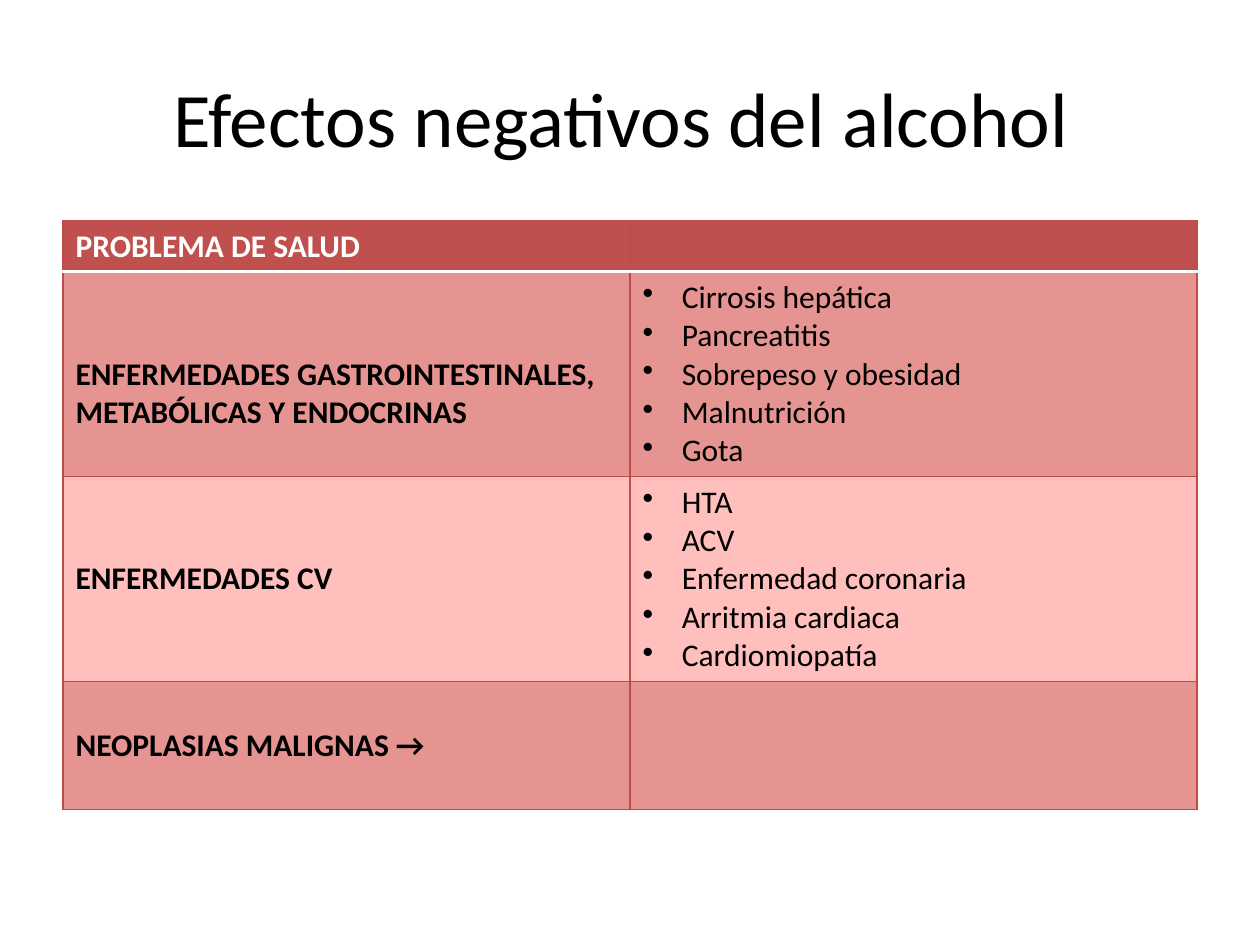
"""Build a slide with a table of the negative effects of alcohol on health."""
import pptx
import pptx.dml.color
import pptx.enum.text
import pptx.oxml
import pptx.oxml.ns
import pptx.util
from pptx.util import Cm

COLORS = {
    "text": "000000",
    "header": "C0504D",
    "header_text": "FFFFFF",
    "dark_band": "E59491",
    "light_band": "FFC0BD",
    "border": "BF4C48",
}
FONT = "Calibri"
LINE_HEIGHT = Cm(0.77)
ROWS = [
    (1.03, "header", "PROBLEMA DE SALUD", []),
    (4.13, "dark_band", "ENFERMEDADES GASTROINTESTINALES, METABÓLICAS Y ENDOCRINAS",
     ["Cirrosis hepática", "Pancreatitis", "Sobrepeso y obesidad", "Malnutrición", "Gota"]),
    (4.13, "light_band", "ENFERMEDADES CV",
     ["HTA", "ACV", "Enfermedad coronaria", "Arritmia cardiaca", "Cardiomiopatía"]),
    (2.58, "dark_band", "NEOPLASIAS MALIGNAS →", []),
]


def format_paragraph(paragraph, size, color, bold=False):
    paragraph.font.name = FONT
    paragraph.font.size = pptx.util.Pt(size)
    paragraph.font.bold = bold
    paragraph.font.color.rgb = pptx.dml.color.RGBColor.from_string(COLORS[color])


def set_border(cell, position, side, color, width):
    line = pptx.oxml.parse_xml(
        f'<a:{side} {pptx.oxml.ns.nsdecls("a")} w="{pptx.util.Pt(width)}">'
        f'<a:solidFill><a:srgbClr val="{COLORS[color]}"/></a:solidFill></a:{side}>')
    cell._tc.get_or_add_tcPr().insert(position, line)


presentation = pptx.Presentation()
presentation.slide_width, presentation.slide_height = Cm(25.4), Cm(19.05)
slide = presentation.slides.add_slide(presentation.slide_layouts[5])

title = slide.shapes.title
title.left, title.top, title.width, title.height = Cm(1.27), Cm(0.76), Cm(22.86), Cm(3.18)
title.text_frame.text = "Efectos negativos del alcohol "
title.text_frame.vertical_anchor = pptx.enum.text.MSO_ANCHOR.MIDDLE
title_paragraph = title.text_frame.paragraphs[0]
title_paragraph.alignment = pptx.enum.text.PP_ALIGN.CENTER
format_paragraph(title_paragraph, 44, "text")

table_height = Cm(sum(row[0] for row in ROWS))
table = slide.shapes.add_table(
    len(ROWS), 2, Cm(1.27), Cm(4.45), Cm(22.86), table_height).table

for row_index, (height, band, problem, effects) in enumerate(ROWS):
    table.rows[row_index].height = Cm(height)
    is_header = band == "header"
    for column_index, lines in enumerate([[problem], effects]):
        cell = table.cell(row_index, column_index)
        cell.fill.solid()
        cell.fill.fore_color.rgb = pptx.dml.color.RGBColor.from_string(COLORS[band])
        cell.vertical_anchor = pptx.enum.text.MSO_ANCHOR.MIDDLE
        cell.text_frame.text = "\n".join(lines)
        for paragraph in cell.text_frame.paragraphs:
            format_paragraph(paragraph, 18, "header_text" if is_header else "text",
                             bold=column_index == 0)
            if column_index == 1 and effects:
                properties = paragraph._p.get_or_add_pPr()
                properties.set("marL", str(Cm(0.79)))
                properties.set("indent", str(-Cm(0.79)))
                bullet = pptx.oxml.parse_xml(
                    f'<a:buChar {pptx.oxml.ns.nsdecls("a")} char="•"/>')
                properties.insert_element_before(bullet, "a:tabLst", "a:defRPr", "a:extLst")
        for position, side in enumerate(["lnL", "lnR", "lnT", "lnB"]):
            below_header = (row_index, side) in [(0, "lnB"), (1, "lnT")]
            color, width = ("header_text", 2) if below_header else ("border", 0.75)
            set_border(cell, position, side, color, width)

digestive_cell = table.cell(1, 0)
digestive_cell.margin_top = Cm(0.13) + LINE_HEIGHT

presentation.save("out.pptx")
